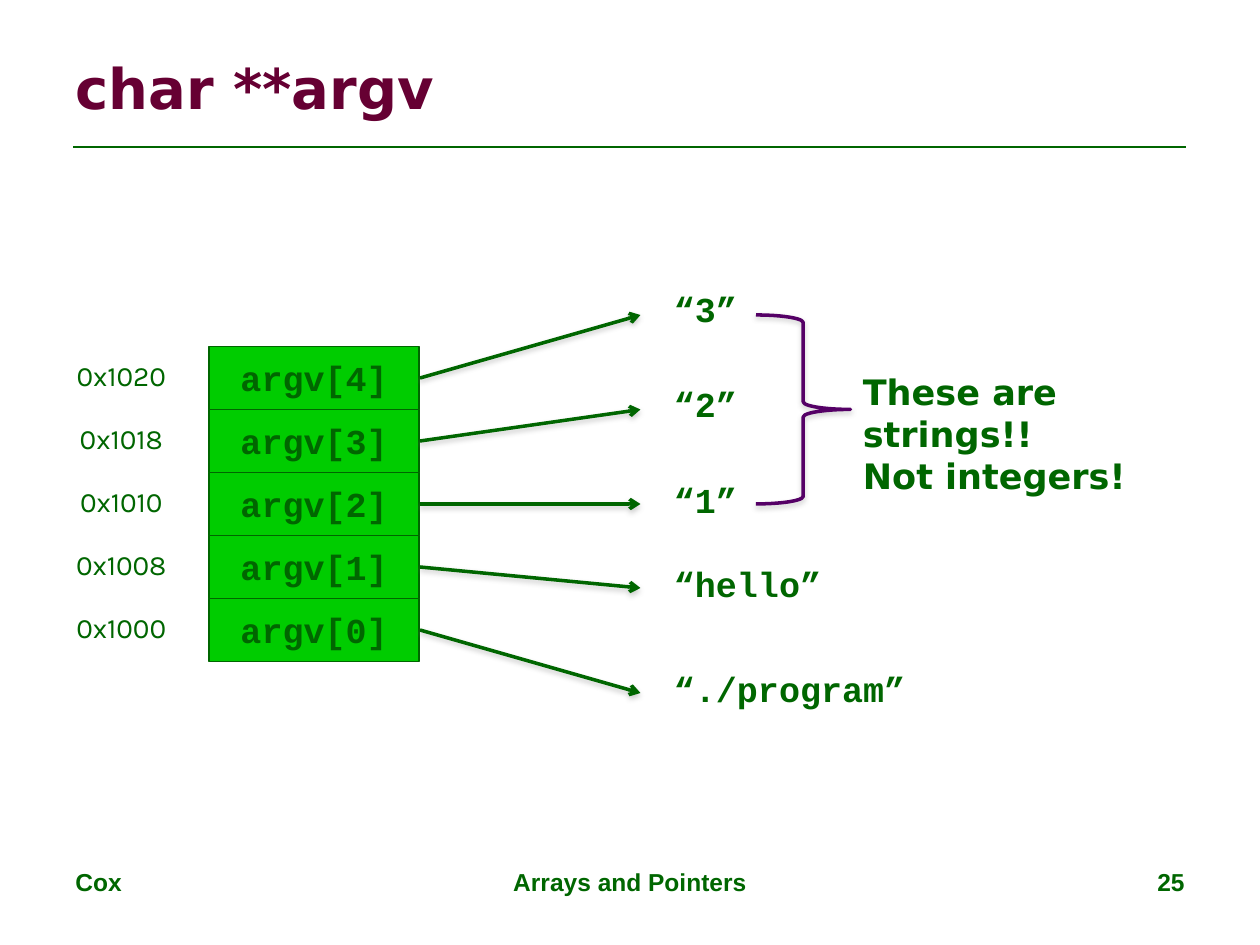
from dataclasses import dataclass

from lxml import etree
from pptx import Presentation, util as u
from pptx.dml.color import RGBColor
from pptx.enum import shapes, text
from pptx.oxml import parse_xml
from pptx.oxml.ns import nsdecls, qn

COLORS = {"green": "006600", "cell": "00CC00", "title": "660033",
          "brace": "550066", "shadow": "808080"}
ALIGN = text.PP_ALIGN
MIDDLE = text.MSO_ANCHOR.MIDDLE

# The slide is a grid of 120 columns by 90 rows, twelve to the inch
COLUMNS, ROWS = 120, 90
CELL_LEFT, CELL_WIDTH, CELL_HEIGHT = 20, 20, 6
STACK_TOP = 33
ARROW_END, STRING_LEFT = 61, 63

CODE = {"name": "Courier New", "size": u.Pt(20), "bold": True}
ADDRESS = {"name": "Karla", "size": u.Pt(16), "bold": False}
FOOTER = {"name": "Arial", "size": u.Pt(14), "bold": True}
TITLE = {"name": "DejaVu Sans", "size": u.Pt(32), "bold": True}
REMARK = {**TITLE, "size": u.Pt(20)}


@dataclass
class Argument:
    """One entry of argv, its address and the string it points to."""
    index: int
    address: str
    value: str
    value_top: float
    value_width: float
    arrow_row: float


@dataclass
class Footer:
    words: str
    left: float
    width: float
    align: ALIGN


ARGUMENTS = [
    Argument(4, "0x1020", "“3”", 26.8, 8.5, 30),
    Argument(3, "0x1018", "“2”", 35.8, 8.5, 39),
    Argument(2, "0x1010", "“1”", 45, 8.5, 48),
    Argument(1, "0x1008", "“hello”", 53, 16.5, 56),
    Argument(0, "0x1000", "“./program”", 63, 24.6, 66),
]
FOOTERS = [
    Footer("Cox", 6, 28, ALIGN.LEFT),
    Footer("Arrays and Pointers", 41, 38, ALIGN.CENTER),
    Footer("25", 86, 28, ALIGN.RIGHT),
]

deck = Presentation()
deck.slide_width, deck.slide_height = u.Inches(10), u.Inches(7.5)
page = deck.slides.add_slide(deck.slide_layouts[6])


def grid(*values: float) -> list[int]:
    return [round(value * deck.slide_width / COLUMNS) for value in values]


def color(name: str) -> RGBColor:
    return RGBColor.from_string(COLORS[name])


def write(box, words: str, font: dict, align=ALIGN.LEFT, ink="green", **frame) -> None:
    for key, value in frame.items():
        setattr(box.text_frame, key, value)
    box.text_frame.text = words
    for para in box.text_frame.paragraphs:
        para.alignment = align
        for span in para.runs:
            span.font.color.rgb = color(ink)
            for key, value in font.items():
                setattr(span.font, key, value)


def add_text(place: tuple, words: str, font: dict, align=ALIGN.LEFT,
             ink="green", **frame) -> None:
    box = page.shapes.add_textbox(*grid(*place))
    write(box, words, font, align, ink, **{"word_wrap": False, **frame})


def outline(shape, ink: str, width: float) -> None:
    shape.line.color.rgb = color(ink)
    shape.line.width = u.Pt(width)


def add_shadow(shape) -> None:
    """Give a soft grey shadow just below the shape."""
    properties = shape._element.spPr
    for old in properties.findall(qn("a:effectLst")):
        properties.remove(old)
    properties.append(parse_xml(
        f'<a:effectLst {nsdecls("a")}><a:outerShdw blurRad="{u.Pt(3.1)}" '
        f'dist="{u.Pt(1.6)}" dir="5400000" rotWithShape="0">'
        f'<a:srgbClr val="{COLORS["shadow"]}"><a:alpha val="38000"/></a:srgbClr>'
        '</a:outerShdw></a:effectLst>'))


def add_line(ends: tuple, width: float):
    line = page.shapes.add_connector(shapes.MSO_CONNECTOR.STRAIGHT, *grid(*ends))
    outline(line, "green", width)
    return line


def add_arrow(ends: tuple) -> None:
    arrow = add_line(ends, 2)
    etree.SubElement(arrow.line._get_or_add_ln(), qn("a:tailEnd"), type="arrow")
    add_shadow(arrow)


def add_argument(row: int, entry: Argument) -> None:
    top = STACK_TOP + row * CELL_HEIGHT
    cell = page.shapes.add_shape(shapes.MSO_SHAPE.RECTANGLE,
                                 *grid(CELL_LEFT - 0.08, top, CELL_WIDTH, CELL_HEIGHT))
    cell.shadow.inherit = False
    cell.fill.solid()
    cell.fill.fore_color.rgb = color("cell")
    outline(cell, "green", 0.75)
    write(cell, f"argv[{entry.index}]", CODE, ALIGN.CENTER,
          word_wrap=False, vertical_anchor=MIDDLE)
    add_text((6, top + 0.6, 11.1, 4.4), entry.address, ADDRESS, ALIGN.CENTER)
    add_arrow((CELL_LEFT + CELL_WIDTH, top + CELL_HEIGHT / 2, ARROW_END, entry.arrow_row))
    add_text((STRING_LEFT, entry.value_top, entry.value_width, 5.3), entry.value, CODE)


# Title and rule
rule = add_line((7, 14, COLUMNS - 7, 14), 1.5)
etree.SubElement(rule._element.spPr, qn("a:effectLst"))
add_text((6, 3.6, 108, 9.4), "char **argv", TITLE, ink="title",
         word_wrap=True, vertical_anchor=MIDDLE)

# Array, addresses, arrows and strings
for row, entry in enumerate(ARGUMENTS):
    add_argument(row, entry)

# Brace and remark
brace = page.shapes.add_shape(shapes.MSO_SHAPE.RIGHT_BRACE, *grid(72, 30, 9, 18))
brace.adjustments[0], brace.adjustments[1] = 0.08, 0.5
brace.fill.background()
outline(brace, "brace", 2)
add_shadow(brace)
add_text((81, 34.7, 37, 9.2), "These are strings!!\nNot integers!", REMARK,
         word_wrap=True)

# Footer
for footer in FOOTERS:
    add_text((footer.left, ROWS - 8, footer.width, 6.2), footer.words, FOOTER,
             footer.align, word_wrap=True)

deck.save("out.pptx")
